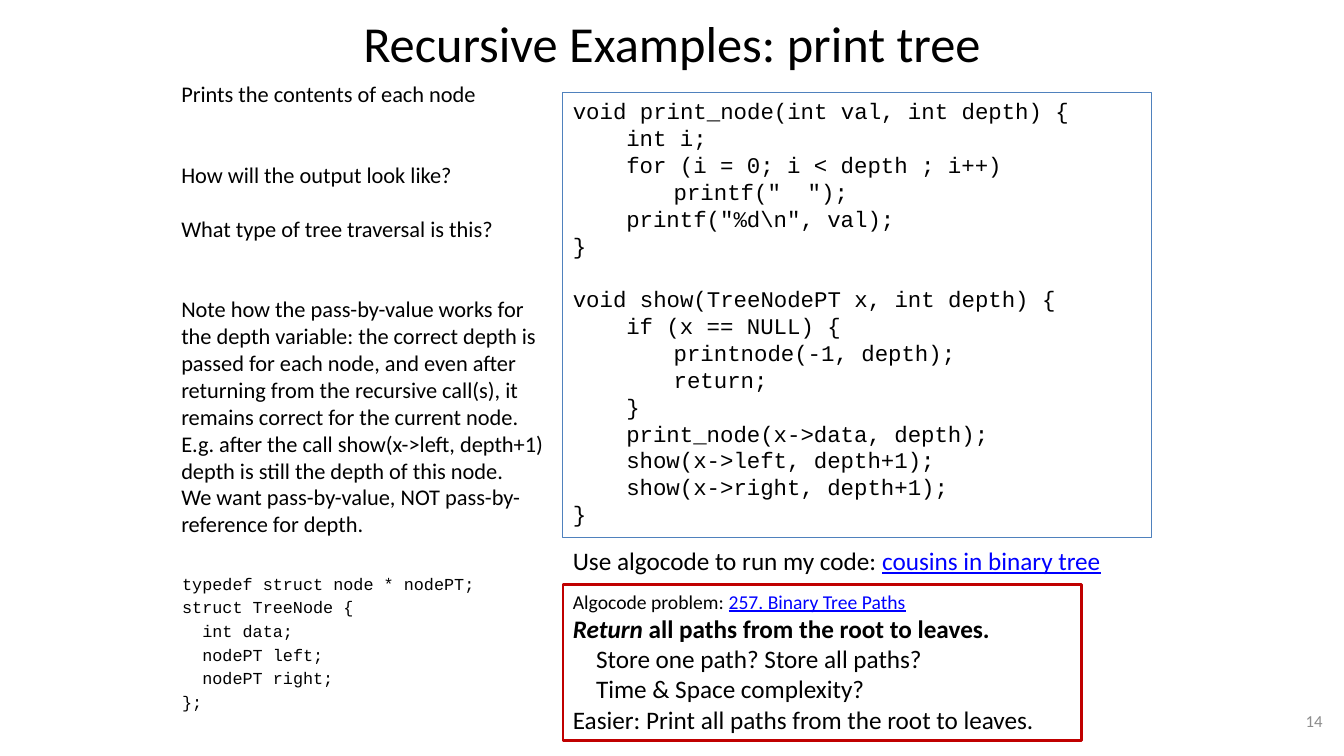
from pptx import Presentation, util as u
from pptx.dml.color import RGBColor
from pptx.enum import shapes, text

BLACK = RGBColor(0, 0, 0)
GRAY = RGBColor(0x8C, 0x8C, 0x8C)
BLUE = RGBColor(0x4F, 0x81, 0xBD)
RED = RGBColor(0xC0, 0, 0)
LINK = RGBColor(0, 0, 0xFF)
SANS, MONO = "Calibri", "Courier New"
CELL = u.Inches(1 / 12)
LEAD = u.Pt(19.2)
LEFT, MID, RIGHT = text.PP_ALIGN.LEFT, text.PP_ALIGN.CENTER, text.PP_ALIGN.RIGHT
TAB, STEP = 0.53, 0.47

CODE = [
    (0, "void print_node(int val, int depth) {"),
    (1, "int i;"),
    (1, "for (i = 0; i < depth ; i++)"),
    (2, 'printf("  ");'),
    (1, r'printf("%d\n", val);'),
    (0, "}"),
    (0, "void show(TreeNodePT x, int depth) {"),
    (1, "if (x == NULL) {"),
    (2, "printnode(-1, depth);"),
    (2, "return;"),
    (1, "}"),
    (1, "print_node(x->data, depth);"),
    (1, "show(x->left, depth+1);"),
    (1, "show(x->right, depth+1);"),
    (0, "}"),
]
NOTES = [
    (0, "Prints the contents of each node"),
    (2, "How will the output look like?"),
    (1, "What type of tree traversal is this?"),
    (2, "Note how the pass-by-value works for the depth variable: the correct "
        "depth is passed for each node, and even after returning from the "
        "recursive call(s), it remains correct for the current node. E.g. after "
        "the call show(x->left, depth+1) depth is still the depth of this node."),
    (0, "We want pass-by-value, NOT pass-by-reference for depth."),
]
TYPE = [
    (0, "typedef struct node * nodePT;"),
    (0, "struct TreeNode {"),
    (0.2, "int data;"),
    (0.2, "nodePT left;"),
    (0.2, "nodePT right;"),
    (0, "};"),
]


def grid(*cells):
    return [round(n * CELL) for n in cells]


def label(slide, cells, anchor=text.MSO_ANCHOR.TOP, wrap=True):
    frame = slide.shapes.add_textbox(*grid(*cells)).text_frame
    frame.word_wrap = wrap
    frame.vertical_anchor = anchor
    return frame


def panel(slide, cells, color, width):
    box = slide.shapes.add_shape(shapes.MSO_SHAPE.RECTANGLE, *grid(*cells))
    box.shadow.inherit = False
    box.fill.background()
    box.line.color.rgb = color
    box.line.width = u.Pt(width)
    box.text_frame.vertical_anchor = text.MSO_ANCHOR.TOP
    box.text_frame.word_wrap = True
    return box.text_frame


def write(frame, words, size, face=SANS, color=BLACK, align=LEFT,
          indent=0, gap=0, lead=None):
    para = frame.paragraphs[0]
    if para.runs:
        para = frame.add_paragraph()
    para.alignment = align
    para.font.size, para.font.name = u.Pt(size), face
    para.font.color.rgb = color
    para.space_before = u.Pt(gap)
    if lead:
        para.line_spacing = lead
    if indent:
        props = para._p.get_or_add_pPr()
        props.set("marL", str(u.Inches(indent)))
        props.set("indent", "0")
    para.add_run().text = words
    return para


def link(para, words):
    run = para.add_run()
    run.text = words
    run.font.color.rgb = LINK
    run.font.underline = True


def task(slide):
    box = panel(slide, (67, 69.6, 61.7, 18.6), RED, 2)
    link(write(box, "Algocode problem: ", 14), "257. Binary Tree Paths")
    goal = write(box, "Return", 18)
    goal.font.bold = True
    goal.runs[0].font.italic = True
    goal.add_run().text = " all paths from the root to leaves."
    write(box, "Store one path? Store all paths?", 18, indent=0.23)
    write(box, "Time & Space complexity?", 18, indent=0.23)
    write(box, "Easier: Print all paths from the root to leaves.", 18)


def main():
    deck = Presentation()
    deck.slide_width, deck.slide_height = u.Inches(13.33), u.Inches(7.5)
    slide = deck.slides.add_slide(deck.slide_layouts[6])
    middle = text.MSO_ANCHOR.MIDDLE

    write(label(slide, (26, 1, 108, 8), middle),
          "Recursive Examples: print tree", 36, align=MID)
    write(label(slide, (121.3, 83.4, 37.3, 4.8), middle),
          "14", 12, color=GRAY, align=RIGHT)

    code = panel(slide, (67, 11, 70, 53), BLUE, 0.75)
    for depth, words in CODE:
        indent = TAB + (depth - 1) * STEP if depth else 0
        gap = LEAD.pt if words.startswith("void show") else 0
        write(code, words, 16, MONO, indent=indent, gap=gap, lead=LEAD)

    notes = label(slide, (20.4, 9, 47, 56.2))
    for blank, words in NOTES:
        write(notes, words, 16, gap=blank * LEAD.pt, lead=LEAD)

    task(slide)
    hint = label(slide, (67, 64.3, 65.5, 4.8), wrap=False)
    link(write(hint, "Use algocode to run my code: ", 18), "cousins in binary tree")

    kind = label(slide, (20.5, 67.7, 38.3, 18.1))
    for indent, words in TYPE:
        write(kind, words, 12, MONO, indent=indent, gap=2.4, lead=u.Pt(14.4))

    deck.save("out.pptx")


if __name__ == "__main__":
    main()
